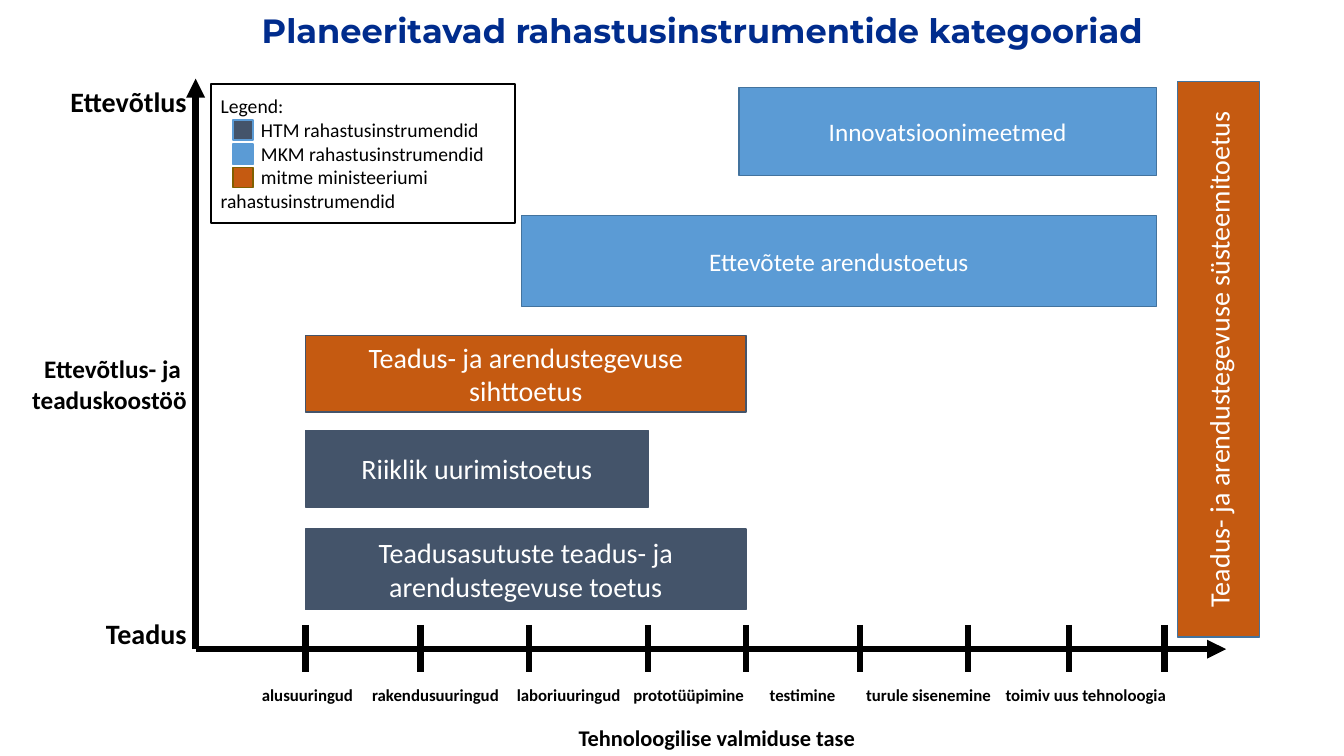
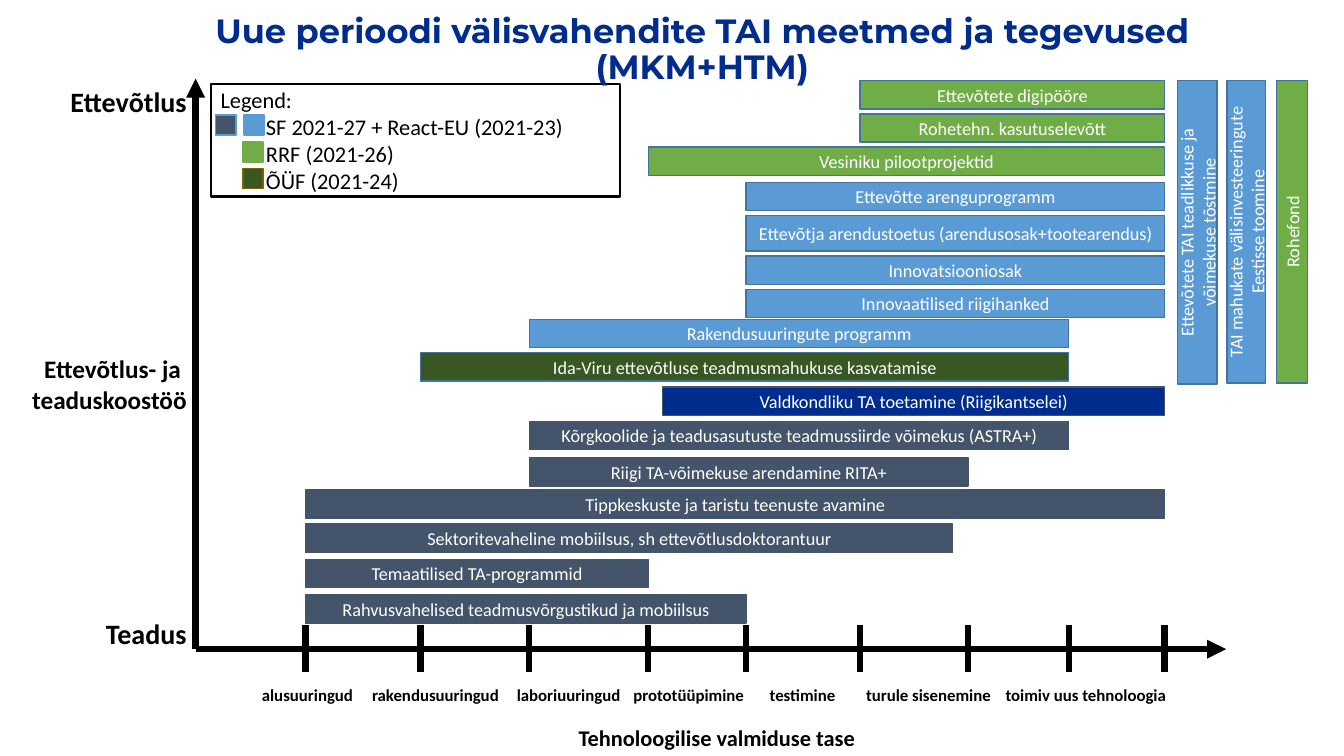
from dataclasses import dataclass
from typing import Any, Optional

import pptx
import pptx.dml.color
import pptx.enum.shapes
import pptx.enum.text
import pptx.oxml
import pptx.oxml.ns
import pptx.util

Inches = pptx.util.Inches
Pt = pptx.util.Pt
Align = pptx.enum.text.PP_ALIGN
Anchor = pptx.enum.text.MSO_ANCHOR

BLACK, WHITE, NAVY = "000000", "FFFFFF", "002C8D"
SLATE, BLUE, ORANGE = "44546A", "5B9BD5", "C55A11"
GREEN, FOREST = "70AD47", "385723"
EDGE, OLIVE = "43739E", "806000"

TICKS = (3.03, 4.17, 5.25, 6.43, 7.4, 8.53, 9.6, 10.6, 11.55)
T0, T1, T2, T3, T4, T5, T6, T7, T8 = TICKS
AXIS_X, AXIS_Y = 1.94, 6.44


@dataclass(frozen=True)
class Label:
    text: str
    centre: float
    size: float
    width: float = 1.95


@dataclass(frozen=True)
class Bar:
    text: str
    left: float
    right: float
    top: float
    fill: str
    height: float = 0.28
    size: float = 13
    line: str = EDGE
    upright: bool = False


@dataclass(frozen=True)
class Swatch:
    left: float
    top: float
    fill: str
    line: str


@dataclass(frozen=True)
class Legend:
    width: float
    height: float
    size: float
    indent: float
    entries: tuple[str, ...]
    swatches: tuple[Swatch, ...]


@dataclass(frozen=True)
class Chart:
    title: str
    legend: Legend
    bars: tuple[Bar, ...]


LEVELS = (
    Label("Ettevõtlus", 1.01, 20),
    Label("Ettevõtlus- ja \vteaduskoostöö", 3.81, 18),
    Label("Teadus", 6.28, 20),
)
STAGES = (
    Label("alusuuringud", 3.05, 12, 0.95),
    Label("rakendusuuringud", 4.32, 12, 1.3),
    Label("laboriuuringud", 5.64, 12, 1.1),
    Label("prototüüpimine", 6.83, 12, 1.15),
    Label("testimine", 7.96, 12, 0.7),
    Label("turule sisenemine", 9.21, 12, 1.3),
    Label("toimiv uus tehnoloogia", 10.77, 12, 1.7),
)

CHARTS = (
    Chart(
        "Planeeritavad rahastusinstrumentide kategooriad",
        Legend(
            3.02, 1.38, 14, 0.4,
            ("HTM rahastusinstrumendid", "MKM rahastusinstrumendid",
             "mitme ministeeriumi rahastusinstrumendid"),
            (Swatch(2.31, 1.43, BLUE, BLUE), Swatch(2.31, 1.66, ORANGE, OLIVE),
             Swatch(2.31, 1.19, SLATE, BLUE)),
        ),
        (
            Bar("Teadus- ja arendustegevuse süsteemitoetus", 11.68, 12.49, 0.81,
                ORANGE, 5.51, 20, upright=True),
            Bar("Ettevõtete arendustoetus", 5.17, 11.47, 2.14, BLUE, 0.9, 18),
            Bar("Innovatsioonimeetmed", 7.33, 11.47, 0.87, BLUE, 0.87, 18),
            Bar("Teadus- ja arendustegevuse sihttoetus", T0, T4, 3.33,
                ORANGE, 0.76, 20, SLATE),
            Bar("Riiklik uurimistoetus", T0, T3, 4.27, SLATE, 0.76, 20, SLATE),
            Bar("Teadusasutuste teadus- ja arendustegevuse toetus", T0, T4, 5.25,
                SLATE, 0.8, 20, SLATE),
        ),
    ),
    Chart(
        "Uue perioodi välisvahendite TAI meetmed ja tegevused (MKM+HTM)",
        Legend(
            4.06, 1.12, 16, 0.45,
            ("SF 2021-27 + React-EU (2021-23)", "RRF (2021-26)", "ÕÜF (2021-24)"),
            (Swatch(2.42, 1.14, BLUE, BLUE), Swatch(2.41, 1.41, GREEN, GREEN),
             Swatch(2.41, 1.67, FOREST, OLIVE), Swatch(2.14, 1.14, SLATE, BLUE)),
        ),
        (
            Bar("Ettevõtete TAI teadlikkuse ja võimekuse tõstmine", 11.68, 12.07, 0.8,
                BLUE, 3.01, upright=True),
            Bar("TAI mahukate välisinvesteeringute Eestisse toomine", 12.17, 12.55, 0.8,
                BLUE, 3, upright=True),
            Bar("Rohefond", 12.66, 12.97, 0.8, GREEN, 3, upright=True),
            Bar("Ettevõtete digipööre", T5, T8, 0.8, GREEN),
            Bar("Rohetehn. kasutuselevõtt", T5, T8, 1.13, GREEN),
            Bar("Vesiniku pilootprojektid", T3, T8, 1.46, GREEN),
            Bar("Ettevõtte arenguprogramm", T4, T8, 1.81, BLUE),
            Bar("Ettevõtja arendustoetus (arendusosak+tootearendus)", T4, T8, 2.14,
                BLUE, 0.35),
            Bar("Innovatsiooniosak", T4, T8, 2.54, BLUE),
            Bar("Innovaatilised riigihanked", T4, T8, 2.87, BLUE),
            Bar("Rakendusuuringute programm", T2, T7, 3.17, BLUE),
            Bar("Ida-Viru ettevõtluse teadmusmahukuse kasvatamise", T1, T7, 3.5, FOREST),
            Bar("Valdkondliku TA toetamine (Riigikantselei)", 6.57, T8, 3.84,
                NAVY, line=SLATE),
            Bar("Kõrgkoolide ja teadusasutuste teadmussiirde võimekus (ASTRA+)",
                T2, T7, 4.18, SLATE, line=SLATE),
            Bar("Riigi TA-võimekuse arendamine RITA+", T2, T6, 4.54, SLATE, line=SLATE),
            Bar("Tippkeskuste ja taristu teenuste avamine", T0, T8, 4.86,
                SLATE, line=SLATE),
            Bar("Sektoritevaheline mobiilsus, sh ettevõtlusdoktorantuur", T0, 9.45, 5.2,
                SLATE, line=SLATE),
            Bar("Temaatilised TA-programmid", T0, T3, 5.55, SLATE, line=SLATE),
            Bar("Rahvusvahelised teadmusvõrgustikud ja mobiilsus", T0, T4, 5.9,
                SLATE, line=SLATE),
        ),
    ),
)


def rgb(value: str) -> pptx.dml.color.RGBColor:
    return pptx.dml.color.RGBColor.from_string(value)


def write(p: Any, text: str, *, size: float, color: str = BLACK, bold: bool = False,
          font: str = "Calibri", align: Any = Align.LEFT,
          spacing: Optional[float] = None) -> None:
    """Fill a paragraph with text in one format."""
    p.text = text
    p.alignment = align
    p.line_spacing = spacing
    for r in p.runs:
        r.font.name, r.font.size, r.font.bold = font, Pt(size), bold
        r.font.color.rgb = rgb(color)


def add_text(s: Any, text: str, left: float, top: float, width: float, height: float,
             *, wrap: bool = False, inset: float = 0.1, anchor: Any = Anchor.MIDDLE,
             **style: Any) -> None:
    tf = s.shapes.add_textbox(Inches(left), Inches(top), Inches(width),
                              Inches(height)).text_frame
    tf.word_wrap = wrap
    tf.vertical_anchor = anchor
    tf.margin_left = tf.margin_right = Inches(inset)
    write(tf.paragraphs[0], text, **style)


def add_rect(s: Any, left: float, top: float, width: float, height: float,
             fill: str, line: str, weight: float = 1) -> Any:
    sp = s.shapes.add_shape(pptx.enum.shapes.MSO_SHAPE.RECTANGLE, Inches(left),
                            Inches(top), Inches(width), Inches(height))
    sp.shadow.inherit = False
    sp.fill.solid()
    sp.fill.fore_color.rgb = rgb(fill)
    sp.line.color.rgb = rgb(line)
    sp.line.width = Pt(weight)
    sp.text_frame.word_wrap = True
    sp.text_frame.vertical_anchor = Anchor.MIDDLE
    return sp


def add_line(s: Any, x1: float, y1: float, x2: float, y2: float,
             arrow: bool = False) -> None:
    sp = s.shapes.add_connector(pptx.enum.shapes.MSO_CONNECTOR.STRAIGHT,
                                Inches(x1), Inches(y1), Inches(x2), Inches(y2))
    sp.line.color.rgb = rgb(BLACK)
    sp.line.width = Pt(4.5)
    if arrow:
        tail = pptx.oxml.parse_xml(
            f'<a:tailEnd {pptx.oxml.ns.nsdecls("a")} type="triangle"/>')
        sp.line._get_or_add_ln().append(tail)
    sp._element.spPr.append(
        pptx.oxml.parse_xml(f'<a:effectLst {pptx.oxml.ns.nsdecls("a")}/>'))


def add_legend(s: Any, legend: Legend) -> None:
    tf = add_rect(s, 2.09, 0.83, legend.width, legend.height,
                  WHITE, BLACK, 1.5).text_frame
    write(tf.paragraphs[0], "Legend:", size=legend.size)
    for entry in legend.entries:
        p = tf.add_paragraph()
        write(p, entry, size=legend.size)
        p._p.get_or_add_pPr().set("indent", str(Inches(legend.indent)))
    for swatch in legend.swatches:
        add_rect(s, swatch.left, swatch.top, 0.2, 0.2, swatch.fill, swatch.line)


def add_axes(s: Any) -> None:
    add_line(s, AXIS_X, AXIS_Y, 12.16, AXIS_Y, arrow=True)
    add_line(s, AXIS_X, AXIS_Y, AXIS_X, 0.78, arrow=True)
    for x in TICKS:
        add_line(s, x, 6.2, x, 6.67)
    for level in LEVELS:
        add_text(s, level.text, 0, level.centre - 0.35, level.width, 0.7,
                 size=level.size, bold=True, align=Align.RIGHT)
    for stage in STAGES:
        add_text(s, stage.text, stage.centre - stage.width / 2, 6.74, stage.width, 0.3,
                 inset=0, size=stage.size, bold=True, align=Align.CENTER)
    add_text(s, "Tehnoloogilise valmiduse tase", 5.64, 7.13, 3.81, 0.37,
             wrap=True, size=16, bold=True)


def add_bar(s: Any, bar: Bar) -> None:
    """Draw a bar; an upright one is a flat one turned about its centre."""
    left, top, width, height = bar.left, bar.top, bar.right - bar.left, bar.height
    if bar.upright:
        shift = (height - width) / 2
        left, top, width, height = left - shift, top + shift, height, width
    sp = add_rect(s, left, top, width, height, bar.fill, bar.line)
    sp.rotation = 270 if bar.upright else 0
    write(sp.text_frame.paragraphs[0], bar.text, size=bar.size, color=WHITE,
          align=Align.CENTER)


def add_chart_slide(prs: Any, chart: Chart) -> None:
    s = prs.slides.add_slide(prs.slide_layouts[6])
    add_legend(s, chart.legend)
    add_axes(s)
    add_text(s, chart.title, 1.38, 0.09, 11.17, 0.46, wrap=True, anchor=Anchor.TOP,
             size=24, color=NAVY, bold=True, font="Montserrat",
             align=Align.CENTER, spacing=0.9)
    for bar in chart.bars:
        add_bar(s, bar)


def main() -> None:
    prs = pptx.Presentation()
    prs.slide_width, prs.slide_height = Inches(13.33), Inches(7.5)
    for chart in CHARTS:
        add_chart_slide(prs, chart)
    prs.save("out.pptx")


if __name__ == "__main__":
    main()
